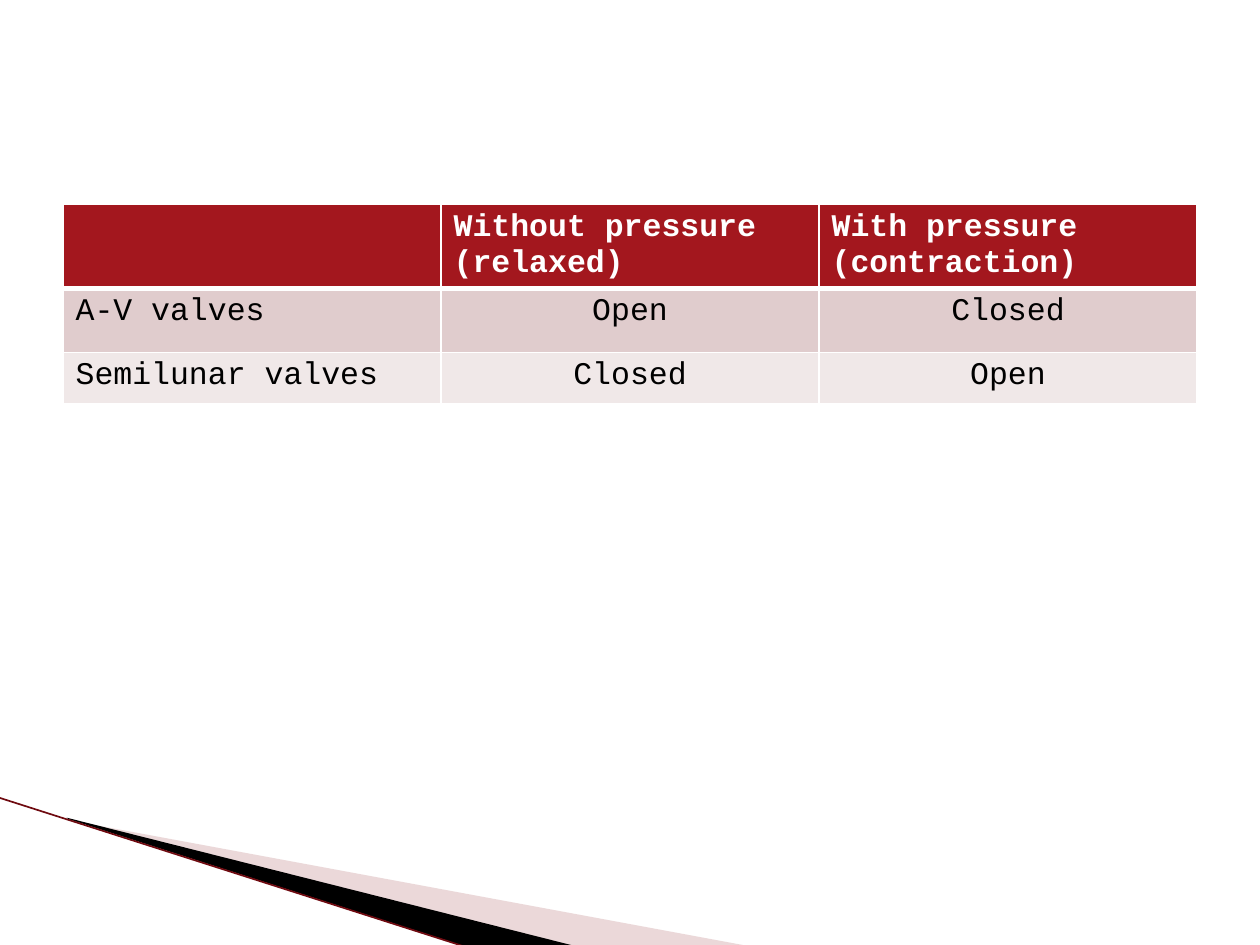
"""Build a slide with a table of heart valve states under pressure."""
from dataclasses import dataclass

from lxml import etree
from pptx import Presentation
from pptx import util as u
from pptx.dml.color import RGBColor
from pptx.enum import shapes, text
from pptx.oxml import ns


@dataclass(frozen=True)
class Theme:
    font: str = "Courier New"
    size: int = 18
    white: str = "FFFFFF"
    black: str = "000000"
    header: str = "A3171E"
    bands: tuple = ("E0CCCD", "F0E8E8")
    pale_wedge: str = "CD9FA0"
    edge: str = "6F0A10"


theme = Theme()


def add_wedge(slide, corners, color):
    points = [(u.Inches(x), u.Inches(y)) for x, y in corners]
    builder = slide.shapes.build_freeform(*points[0], scale=1.0)
    builder.add_line_segments(points[1:], close=True)
    wedge = builder.convert_to_shape()
    wedge.shadow.inherit = False
    wedge.fill.solid()
    wedge.fill.fore_color.rgb = RGBColor.from_string(color)
    wedge.line.fill.background()
    return wedge


def add_borders(cell, widths):
    properties = cell._tc.get_or_add_tcPr()
    for index, (side, points) in enumerate(widths.items()):
        border = etree.Element(ns.qn(f"a:ln{side}"), w=str(u.Pt(points)))
        fill = etree.SubElement(border, ns.qn("a:solidFill"))
        etree.SubElement(fill, ns.qn("a:srgbClr"), val=theme.white)
        properties.insert(index, border)


prs = Presentation()
prs.slide_width, prs.slide_height = u.Inches(10), u.Inches(7.5)
slide = prs.slides.add_slide(prs.slide_layouts[6])

pale_wedge = add_wedge(
    slide, [(0.55, 6.51), (5.95, 7.51), (4.56, 7.51), (0.55, 6.5)], theme.pale_wedge)
pale_color = pale_wedge.fill._xPr.find(".//" + ns.qn("a:srgbClr"))
etree.SubElement(pale_color, ns.qn("a:alpha"), val="40000")
add_wedge(slide, [(0.53, 6.49), (4.57, 7.51), (3.72, 7.52), (0.54, 6.5)], theme.black)

edge = slide.shapes.add_connector(
    shapes.MSO_CONNECTOR.STRAIGHT,
    u.Inches(-0.01), u.Inches(6.33), u.Inches(3.71), u.Inches(7.52))
edge.line.color.rgb = RGBColor.from_string(theme.edge)
edge.line.width = u.Pt(0.95)
etree.SubElement(edge._element.spPr, ns.qn("a:effectLst"))

valve_states = [
    ["", "Without pressure\n(relaxed)", "With pressure\n(contraction)"],
    ["A-V valves", "Open", "Closed"],
    ["Semilunar valves", "Closed", "Open"],
]
row_heights = [0.66, 0.51, 0.41]
valves = slide.shapes.add_table(
    3, 3, u.Inches(0.5), u.Inches(1.62), u.Inches(9), u.Inches(sum(row_heights))).table

for row, (height, labels) in enumerate(zip(row_heights, valve_states)):
    valves.rows[row].height = u.Inches(height)
    is_header = row == 0
    for column, label in enumerate(labels):
        cell = valves.cell(row, column)
        cell.text = label
        cell.fill.solid()
        cell.fill.fore_color.rgb = RGBColor.from_string(
            theme.header if is_header else theme.bands[row - 1])
        add_borders(cell, {"L": 1, "R": 1, "T": 3 if row == 1 else 1,
                           "B": 3 if is_header else 1})
        for paragraph in cell.text_frame.paragraphs:
            centred = column > 0 and not is_header
            paragraph.alignment = text.PP_ALIGN.CENTER if centred else text.PP_ALIGN.LEFT
            paragraph.font.name = theme.font
            paragraph.font.size = u.Pt(theme.size)
            paragraph.font.bold = is_header
            paragraph.font.color.rgb = RGBColor.from_string(
                theme.white if is_header else theme.black)

prs.save("out.pptx")
